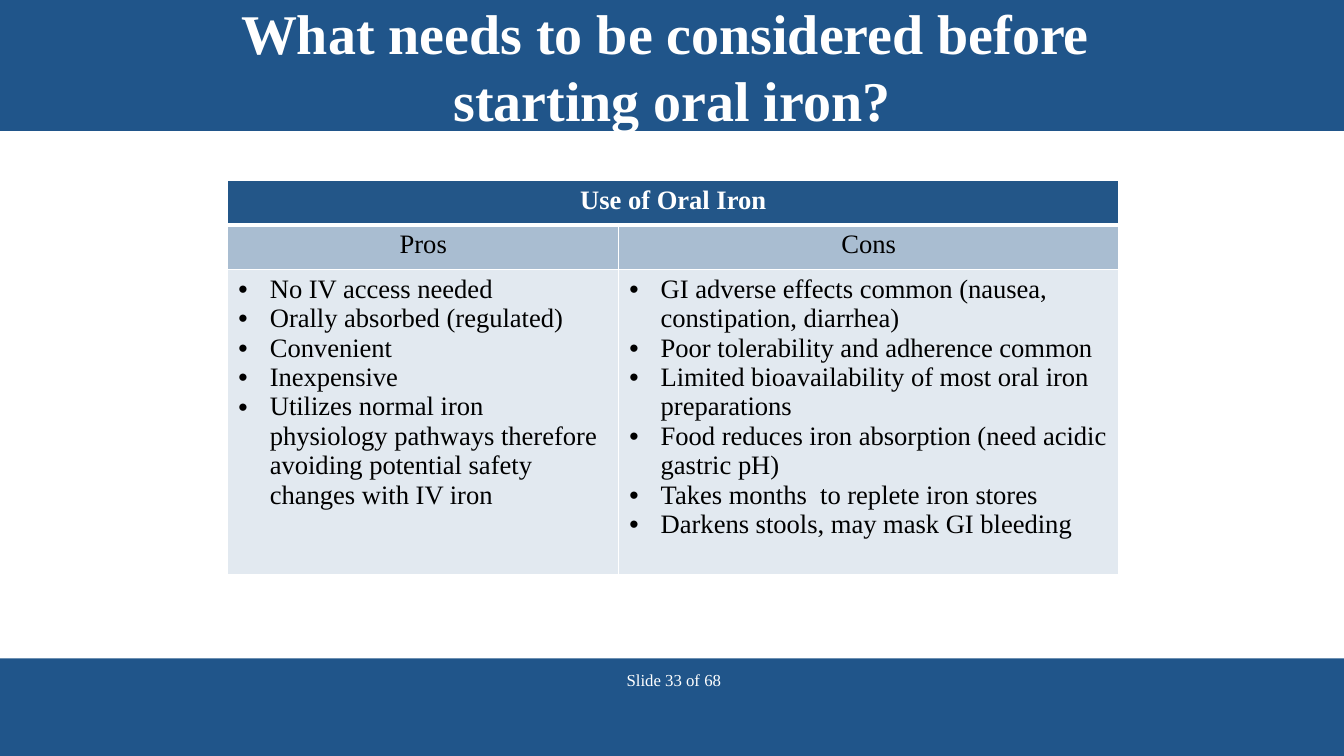
from lxml import etree
from pptx import Presentation
from pptx.dml.color import RGBColor
from pptx.enum import shapes, text
from pptx.oxml.ns import qn
from pptx.util import Cm, Pt

HUES = {"band": "20558A", "head": "235688", "mid": "A9BDD1",
        "pale": "E2E9F0", "white": "FFFFFF", "black": "000000"}
PROS = ["No IV access needed", "Orally absorbed (regulated)", "Convenient",
        "Inexpensive",
        "Utilizes normal iron physiology pathways therefore avoiding "
        "potential safety changes with IV iron"]
CONS = ["GI adverse effects common (nausea, constipation, diarrhea)",
        "Poor tolerability and adherence common",
        "Limited bioavailability of most oral iron preparations",
        "Food reduces iron absorption (need acidic gastric pH)",
        "Takes months  to replete iron stores",
        "Darkens stools, may mask GI bleeding"]


class Deck:
    font = "Times New Roman"

    def __init__(self, wide, high):
        self.prs = Presentation()
        self.prs.slide_width, self.prs.slide_height = Cm(wide), Cm(high)
        self.slide = self.prs.slides.add_slide(self.prs.slide_layouts[6])

    def paint(self, fill, hue):
        fill.solid()
        fill.fore_color.rgb = RGBColor.from_string(HUES[hue])

    def band(self, top, high):
        box = self.slide.shapes.add_shape(
            shapes.MSO_SHAPE.RECTANGLE, 0, Cm(top), self.prs.slide_width, Cm(high))
        box.shadow.inherit = False
        self.paint(box.fill, "band")
        box.line.fill.background()

    def run(self, para, words, size, hue, bold=False):
        run = para.add_run()
        run.text = words
        run.font.name, run.font.size, run.font.bold = self.font, Pt(size), bold
        run.font.color.rgb = RGBColor.from_string(HUES[hue])

    def label(self, area, lines, size, bold=False, align=None, anchor=None):
        box = self.slide.shapes.add_textbox(*map(Cm, area))
        frame = box.text_frame
        frame.word_wrap = True
        frame.vertical_anchor = anchor
        para = frame.paragraphs[0]
        para.alignment = align
        for i, line in enumerate(lines):
            if i:
                para.add_line_break()
            self.run(para, line, size, "white", bold)

    def grid(self, left, top, cols, rows):
        table = self.slide.shapes.add_table(
            len(rows), len(cols), Cm(left), Cm(top),
            Cm(sum(cols)), Cm(sum(rows))).table
        for col, wide in zip(table.columns, cols):
            col.width = Cm(wide)
        for row, high in zip(table.rows, rows):
            row.height = Cm(high)
        return table

    def edge(self, cell, top, base):
        props = cell._tc.get_or_add_tcPr()
        for side, width in (("L", 1), ("R", 1), ("T", top), ("B", base)):
            line = etree.SubElement(props, qn(f"a:ln{side}"), w=str(Pt(width)))
            fill = etree.SubElement(line, qn("a:solidFill"))
            etree.SubElement(fill, qn("a:srgbClr"), val=HUES["white"])

    def cell(self, cell, lines, fill, hue="black", bold=False,
             bullet=False, top=1, base=1):
        self.edge(cell, top, base)
        self.paint(cell.fill, fill)
        cell.margin_left = cell.margin_right = Cm(0.27)
        cell.margin_top = cell.margin_bottom = Cm(0.13)
        frame = cell.text_frame
        for i, line in enumerate(lines):
            para = frame.add_paragraph() if i else frame.paragraphs[0]
            if bullet:
                props = para._p.get_or_add_pPr()
                props.set("marL", str(Cm(0.79)))
                props.set("indent", str(-Cm(0.79)))
                etree.SubElement(props, qn("a:buFont"), typeface="Arial")
                etree.SubElement(props, qn("a:buChar"), char="•")
            else:
                para.alignment = text.PP_ALIGN.CENTER
            self.run(para, line, 19, hue, bold)


def main():
    deck = Deck(33.87, 19.05)

    # Bands, title and slide count
    deck.band(0, 3.3)
    deck.band(16.59, 2.48)
    deck.label((0, -0.18, 33.87, 3.68),
               ["What needs to be considered before ", "starting oral iron?"],
               40, True, text.PP_ALIGN.CENTER, text.MSO_ANCHOR.MIDDLE)
    deck.label((15.54, 16.76, 3.23, 0.76), ["Slide 33 of 68"], 12)

    # Table of pros and cons
    table = deck.grid(5.74, 4.55, [9.85, 12.6], [1.12, 1.12, 7.7])
    table.cell(0, 0).merge(table.cell(0, 1))
    deck.cell(table.cell(0, 0), ["Use of Oral Iron"], "head", "white", True, base=3)
    for col, (name, items) in enumerate((("Pros", PROS), ("Cons", CONS))):
        deck.cell(table.cell(1, col), [name], "mid", top=3)
        deck.cell(table.cell(2, col), items, "pale", bullet=True)

    deck.prs.save("out.pptx")


if __name__ == "__main__":
    main()
